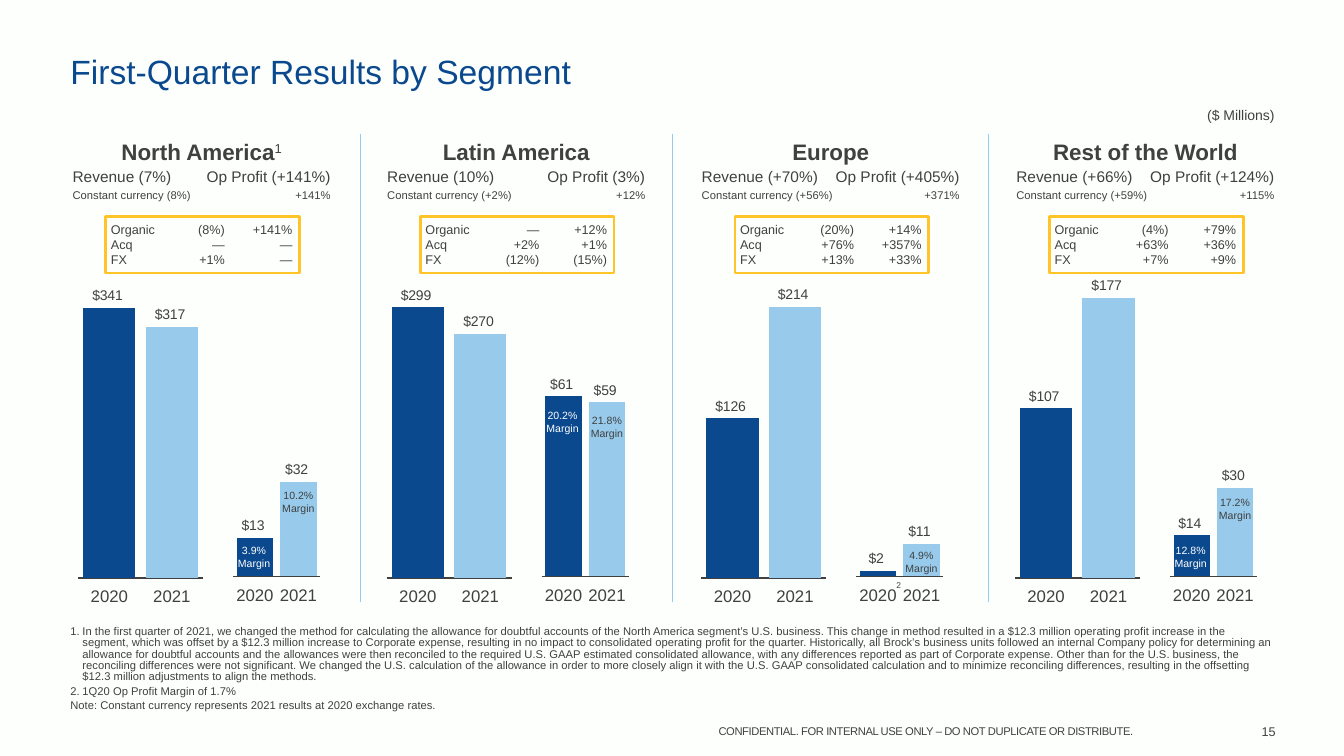
from dataclasses import dataclass

from lxml.etree import SubElement
from pptx import Presentation
from pptx.chart.data import CategoryChartData
from pptx.dml.color import RGBColor
from pptx.enum.chart import XL_CHART_TYPE, XL_LABEL_POSITION, XL_TICK_LABEL_POSITION, XL_TICK_MARK
from pptx.enum.shapes import MSO_CONNECTOR, MSO_SHAPE
from pptx.enum.text import MSO_ANCHOR, PP_ALIGN
from pptx.oxml import parse_xml
from pptx.oxml.ns import nsdecls, qn
from pptx.util import Inches, Pt


@dataclass(frozen=True)
class Theme:
    font: str = "Arial"
    back: RGBColor = RGBColor(0xFD, 0xFF, 0xFD)
    ink: RGBColor = RGBColor(0x3F, 0x40, 0x3F)
    navy: RGBColor = RGBColor(0x0A, 0x49, 0x8E)
    sky: RGBColor = RGBColor(0x97, 0xCA, 0xEB)
    gold: RGBColor = RGBColor(0xFF, 0xC5, 0x28)
    white: RGBColor = RGBColor(0xFF, 0xFF, 0xFF)
    title: float = 24
    head: float = 16
    axis: float = 12
    lead: float = 11
    label: float = 10
    body: float = 9
    note: float = 8
    tag: float = 7.5
    mark: float = 6


theme = Theme()
LEFT, MID, RIGHT = PP_ALIGN.LEFT, PP_ALIGN.CENTER, PP_ALIGN.RIGHT


def write(frame, text, size, color=theme.ink, bold=False, align=LEFT, raised="",
          line=None, after=None, tabs=(), numbered=0, track=None):
    """Fill a frame, one paragraph a line; the first `numbered` ones get numbers."""
    frame.word_wrap = True
    for i, words in enumerate(text.split("\n")):
        para = frame.paragraphs[0] if i == 0 else frame.add_paragraph()
        para.alignment = align
        if line:
            para.line_spacing = line
        if after:
            para.space_after = Pt(after)
        props = para._p.get_or_add_pPr()
        if i < numbered:
            props.set("marL", str(Inches(0.12)))
            props.set("indent", str(-Inches(0.12)))
            SubElement(props, qn("a:buAutoNum"), type="arabicPeriod")
        if tabs:
            stops = SubElement(props, qn("a:tabLst"))
            for stop in tabs:
                SubElement(stops, qn("a:tab"), pos=str(Inches(stop)), algn="r")
        for part in filter(None, (words, raised)):
            run = para.add_run()
            run.text = part
            font = run.font
            font.name, font.size, font.color.rgb = theme.font, Pt(size), color
            font.bold = bold and part == words
            if part == raised:
                run._r.get_or_add_rPr().set("baseline", "30000")
            if track:
                run._r.get_or_add_rPr().set("spc", str(track))


def label(x, y, w, h, text, size, pad=(0.1, 0.05, 0.1, 0.05), anchor=MSO_ANCHOR.TOP, **style):
    """Place a text box."""
    frame = slide.shapes.add_textbox(Inches(x), Inches(y), Inches(w), Inches(h)).text_frame
    frame.margin_left, frame.margin_top, frame.margin_right, frame.margin_bottom = map(Inches, pad)
    frame.vertical_anchor = anchor
    write(frame, text, size, **style)


deck = Presentation()
deck.slide_width, deck.slide_height = Inches(13.33), Inches(7.5)
slide = deck.slides.add_slide(deck.slide_layouts[6])
slide.background.fill.solid()
slide.background.fill.fore_color.rgb = theme.back

label(6.75, 7.14, 4.87, 0.24, "CONFIDENTIAL. FOR INTERNAL USE ONLY – DO NOT DUPLICATE OR DISTRIBUTE.",
      theme.note, align=MID, track=-30)
label(12.14, 7.13, 0.61, 0.25, "15", theme.body, align=RIGHT, anchor=MSO_ANCHOR.MIDDLE)
label(0.6, 0.5, 12.14, 0.46, "First-Quarter Results by Segment", theme.title,
      color=theme.navy, line=0.9, anchor=MSO_ANCHOR.BOTTOM)
label(10.31, 1.01, 2.43, 0.27, "($ Millions)", theme.label, align=RIGHT)

method = " ".join([
    "In the first quarter of 2021, we changed the method for calculating the allowance for doubtful "
    "accounts of the North America segment’s U.S. business.",
    "This change in method resulted in a $12.3 million operating profit increase in the segment, which was "
    "offset by a $12.3 million increase to Corporate expense, resulting in no impact to consolidated "
    "operating profit for the quarter.",
    "Historically, all Brock’s business units followed an internal Company policy for determining an "
    "allowance for doubtful accounts and the allowances were then reconciled to the required U.S. GAAP "
    "estimated consolidated allowance, with any differences reported as part of Corporate expense.",
    "Other than for the U.S. business, the reconciling differences were not significant.",
    "We changed the U.S. calculation of the allowance in order to more closely align it with the U.S. GAAP "
    "consolidated calculation and to minimize reconciling differences, resulting in the offsetting $12.3 "
    "million adjustments to align the methods.",
])
notes = "\n".join([
    method,
    "1Q20 Op Profit Margin of 1.7%",
    "Note: Constant currency represents 2021 results at 2020 exchange rates.",
])
label(0.6, 6.33, 12.14, 0.73, notes, theme.note, pad=(0.1, 0.05, 0.1, 0),
      anchor=MSO_ANCHOR.BOTTOM, line=0.85, after=2, numbered=2)

for x in (3.57, 6.67, 9.8):
    rule = slide.shapes.add_connector(MSO_CONNECTOR.STRAIGHT, Inches(x), Inches(1.33), Inches(x), Inches(5.97))
    rule.line.color.rgb = theme.sky
    rule.line.width = Pt(0.5)
    SubElement(rule._element.spPr, qn("a:effectLst"))

# name, raised mark, first column width, table rows, bridge, chart left,
# revenue, profit, margin tags as (bar, top, value)
segments = [
    ("North America", "1", 1.31,
     [("Revenue (7%)", "Op Profit (+141%)"), ("Constant currency (8%)", "+141%")],
     "Organic\t(8%)\t+141%\nAcq\t—\t—\nFX\t+1%\t—",
     0.75, (341, 317), (13, 32), [(0, 5.4, "3.9%"), (1, 4.85, "10.2%")]),
    ("Latin America", "", 1.43,
     [("Revenue (10%)", "Op Profit (3%)"), ("Constant currency (+2%)", "+12%")],
     "Organic\t—\t+12%\nAcq\t+2%\t+1%\nFX\t(12%)\t(15%)",
     3.81, (299, 270), (61, 59), [(0, 4.06, "20.2%"), (1, 4.11, "21.8%")]),
    ("Europe", "", 1.32,
     [("Revenue (+70%)", "Op Profit (+405%)"), ("Constant currency (+56%)", "+371%")],
     "Organic\t(20%)\t+14%\nAcq\t+76%\t+357%\nFX\t+13%\t+33%",
     6.93, (126, 214), (2, 11), [(1, 5.45, "4.9%")]),
    ("Rest of the World", "", 1.32,
     [("Revenue (+66%)", "Op Profit (+124%)"), ("Constant currency (+59%)", "+115%")],
     "Organic\t(4%)\t+79%\nAcq\t+63%\t+36%\nFX\t+7%\t+9%",
     10.04, (107, 177), (14, 30), [(0, 5.4, "12.8%"), (1, 4.92, "17.2%")]),
]
money = '"$"#,##0_);[Red]\\("$"#,##0\\)'
inner = (
    f'<c:layout {nsdecls("c")}><c:manualLayout><c:layoutTarget val="inner"/>'
    '<c:xMode val="edge"/><c:yMode val="edge"/><c:x val="0.165"/><c:y val="0.042"/>'
    '<c:w val="0.669"/><c:h val="0.804"/></c:manualLayout></c:layout>'
)
clear = f'<c:spPr {nsdecls("c", "a")}><a:noFill/><a:ln><a:noFill/></a:ln></c:spPr>'

for i, (name, raised, split, rows, bridge, left, sales, profit, tags) in enumerate(segments):
    side = left + 1.35
    for x, y, h, vals, top in ((left, 2.52, 3.56, sales, None), (side, 2.64, 3.64, profit, 100)):
        data = CategoryChartData(number_format=money)
        data.categories = ["2020", "2021"]
        data.add_series("Series 1", vals)
        chart = slide.shapes.add_chart(XL_CHART_TYPE.COLUMN_CLUSTERED, Inches(x), Inches(y),
                                       Inches(1.29), Inches(h), data).chart
        chart.has_legend = chart.has_title = False
        chart.font.name, chart.font.size = theme.font, Pt(theme.label)
        chart.font.color.rgb = theme.ink
        years, scale = chart.category_axis, chart.value_axis
        for axis in (years, scale):
            axis.major_tick_mark = axis.minor_tick_mark = XL_TICK_MARK.NONE
            axis.has_major_gridlines = False
        years.tick_label_position = XL_TICK_LABEL_POSITION.LOW
        years.tick_labels.font.size = Pt(theme.axis)
        years.format.line.color.rgb = theme.ink
        years.format.line.width = Pt(1)
        scale.tick_label_position = XL_TICK_LABEL_POSITION.NONE
        scale.format.line.fill.background()
        scale.minimum_scale = 0
        if top:
            scale.maximum_scale = top
        plot = chart.plots[0]
        plot.gap_width, plot.overlap, plot.vary_by_categories = 20, -32, False
        for bar, color in enumerate((theme.navy, theme.sky)):
            fill = plot.series[0].points[bar].format.fill
            fill.solid()
            fill.fore_color.rgb = color
        plot.has_data_labels = True
        marks = plot.data_labels
        marks.show_value = True
        marks.position = XL_LABEL_POSITION.OUTSIDE_END
        marks.number_format, marks.number_format_is_linked = money, False
        marks.font.size, marks.font.color.rgb = Pt(theme.label), theme.ink
        root = chart._chartSpace
        root.find(qn("c:chart")).addnext(parse_xml(clear))
        if top:
            area = root.find(".//" + qn("c:plotArea"))
            for old in area.findall(qn("c:layout")):
                area.remove(old)
            area.insert(0, parse_xml(inner))

    for bar, y, value in tags:
        label(side + 0.24 + 0.44 * bar, y, 0.36, 0.28, value + "\nMargin", theme.tag, pad=(0, 0, 0, 0.03),
              anchor=MSO_ANCHOR.MIDDLE, align=MID, color=(theme.white, theme.ink)[bar])
    if name == "Europe":
        label(8.81, 5.71, 0.18, 0.2, "2", theme.mark)

    x = 0.72 + 3.12 * i
    frame = slide.shapes.add_table(3, 2, Inches(x), Inches(1.37), Inches(2.56), Inches(0.64))
    frame._element.find(".//" + qn("a:tableStyleId")).text = "{2D5ABB26-0587-4C30-8999-92F81FD0307C}"
    table = frame.table
    table.first_row = table.horz_banding = False
    for col, w in zip(table.columns, (split, 2.56 - split)):
        col.width = Inches(w)
    for row, h in zip(table.rows, (0.28, 0.2, 0.16)):
        row.height = Inches(h)
    table.cell(0, 0).merge(table.cell(0, 1))
    for cell in table.iter_cells():
        cell.fill.background()
        cell.vertical_anchor = MSO_ANCHOR.MIDDLE
        cell.margin_left = cell.margin_right = 0
        cell.margin_top = cell.margin_bottom = Inches(0.01)
    write(table.cell(0, 0).text_frame, name, theme.head, bold=True, align=MID, raised=raised)
    for r, (pair, size) in enumerate(zip(rows, (theme.lead, theme.note)), 1):
        for c, text in enumerate(pair):
            write(table.cell(r, c).text_frame, text, size, align=(LEFT, RIGHT)[c])

    box = slide.shapes.add_shape(MSO_SHAPE.RECTANGLE, Inches(x + 0.33), Inches(2.15), Inches(1.92), Inches(0.56))
    box.shadow.inherit = False
    box.fill.background()
    box.line.color.rgb, box.line.width = theme.gold, Pt(2)
    body = box.text_frame
    body.margin_left = body.margin_top = body.margin_right = body.margin_bottom = Inches(0.05)
    body.vertical_anchor = MSO_ANCHOR.TOP
    write(body, bridge, theme.body, tabs=(1.13, 1.8))

deck.save("out.pptx")
